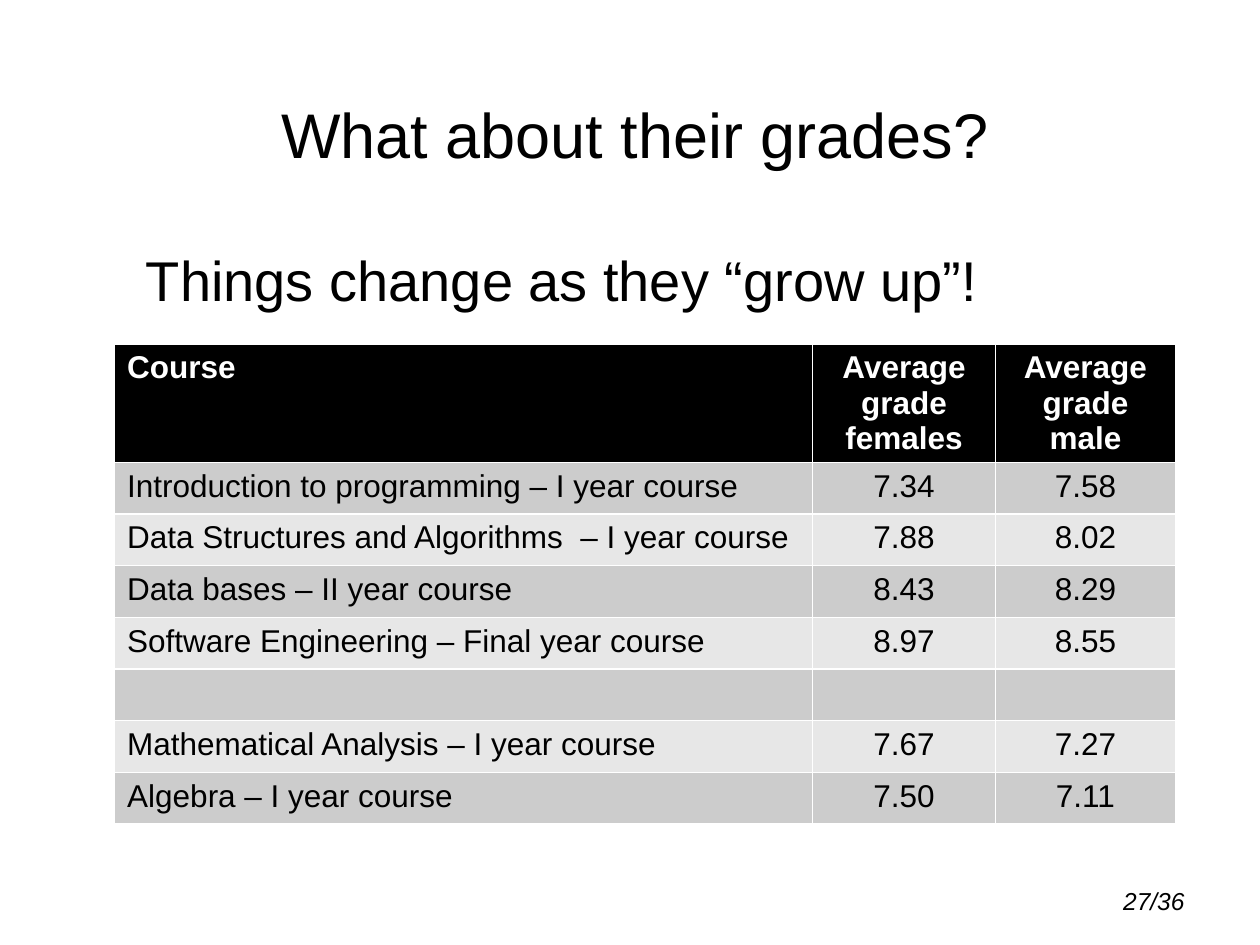
from dataclasses import dataclass
from pptx import Presentation
from pptx.dml.color import RGBColor
from pptx.enum.text import MSO_ANCHOR, PP_ALIGN
from pptx.util import Inches, Pt


@dataclass(frozen=True)
class Theme:
    font: str = "Arial"
    black: str = "000000"
    white: str = "FFFFFF"
    bands: tuple = ("CCCCCC", "E7E7E7")
    title: int = 36
    lead: int = 32
    cell: int = 18
    page: int = 14


class Deck:
    def __init__(self, theme):
        self.theme = theme
        self.file = Presentation()
        self.file.slide_width, self.file.slide_height = Inches(10), Inches(7.5)
        self.slide = self.file.slides.add_slide(self.file.slide_layouts[5])

    def fill_text(self, frame, text, size, color=None, align=PP_ALIGN.LEFT,
                  bold=False, italic=False):
        frame.text = text
        for para in frame.paragraphs:
            para.alignment = align
            font = para.font
            font.name, font.size = self.theme.font, Pt(size)
            font.bold, font.italic = bold, italic
            font.color.rgb = RGBColor.from_string(color or self.theme.black)

    def title(self, text, box):
        shape = self.slide.shapes.title
        shape.left, shape.top, shape.width, shape.height = map(Inches, box)
        frame = shape.text_frame
        frame.vertical_anchor = MSO_ANCHOR.MIDDLE
        frame.margin_bottom = Inches(0.15)
        self.fill_text(frame, text, self.theme.title, align=PP_ALIGN.CENTER)

    def text(self, text, box, size, anchor=MSO_ANCHOR.TOP, inset=0.05, **style):
        frame = self.slide.shapes.add_textbox(*map(Inches, box)).text_frame
        frame.word_wrap = True
        frame.vertical_anchor = anchor
        frame.margin_top = Inches(inset)
        self.fill_text(frame, text, size, **style)

    def table(self, rows, left, top, widths, heights):
        theme = self.theme
        box = map(Inches, (left, top, sum(widths), sum(heights)))
        table = self.slide.shapes.add_table(len(rows), len(widths), *box).table
        for col, width in zip(table.columns, widths):
            col.width = Inches(width)
        for r, values in enumerate(rows):
            table.rows[r].height = Inches(heights[r])
            head = r == 0
            fill = theme.black if head else theme.bands[(r - 1) % 2]
            for c, value in enumerate(values):
                cell = table.cell(r, c)
                cell.fill.solid()
                cell.fill.fore_color.rgb = RGBColor.from_string(fill)
                self.fill_text(cell.text_frame, value, theme.cell,
                               color=theme.white if head else theme.black,
                               align=PP_ALIGN.CENTER if c else PP_ALIGN.LEFT,
                               bold=head)


GRADES = [
    ("Course", "Average grade\nfemales", "Average grade\nmale"),
    ("Introduction to programming – I year course", "7.34", "7.58"),
    ("Data Structures and Algorithms  – I year course", "7.88", "8.02"),
    ("Data bases – II year course", "8.43", "8.29"),
    ("Software Engineering – Final year course", "8.97", "8.55"),
    ("", "", ""),
    ("Mathematical Analysis – I year course", "7.67", "7.27"),
    ("Algebra – I year course", "7.50", "7.11"),
]


def main():
    theme = Theme()
    deck = Deck(theme)

    # Heading
    deck.title("What about their grades?", (0.83, 0.67, 8.42, 0.88))

    # Grades by course, under a taller header row
    heights = [0.93] + [0.41] * (len(GRADES) - 1)
    deck.table(GRADES, 0.91, 2.73, (5.54, 1.45, 1.43), heights)

    # Lead line
    deck.text("Things change as they “grow up”!", (1.06, 1.85, 8.19, 0.64),
              theme.lead, inset=0.1)

    # Page number
    deck.text("27/36", (7.17, 6.95, 2.33, 0.4), theme.page,
              anchor=MSO_ANCHOR.MIDDLE, align=PP_ALIGN.RIGHT, italic=True)

    deck.file.save("out.pptx")


if __name__ == "__main__":
    main()
